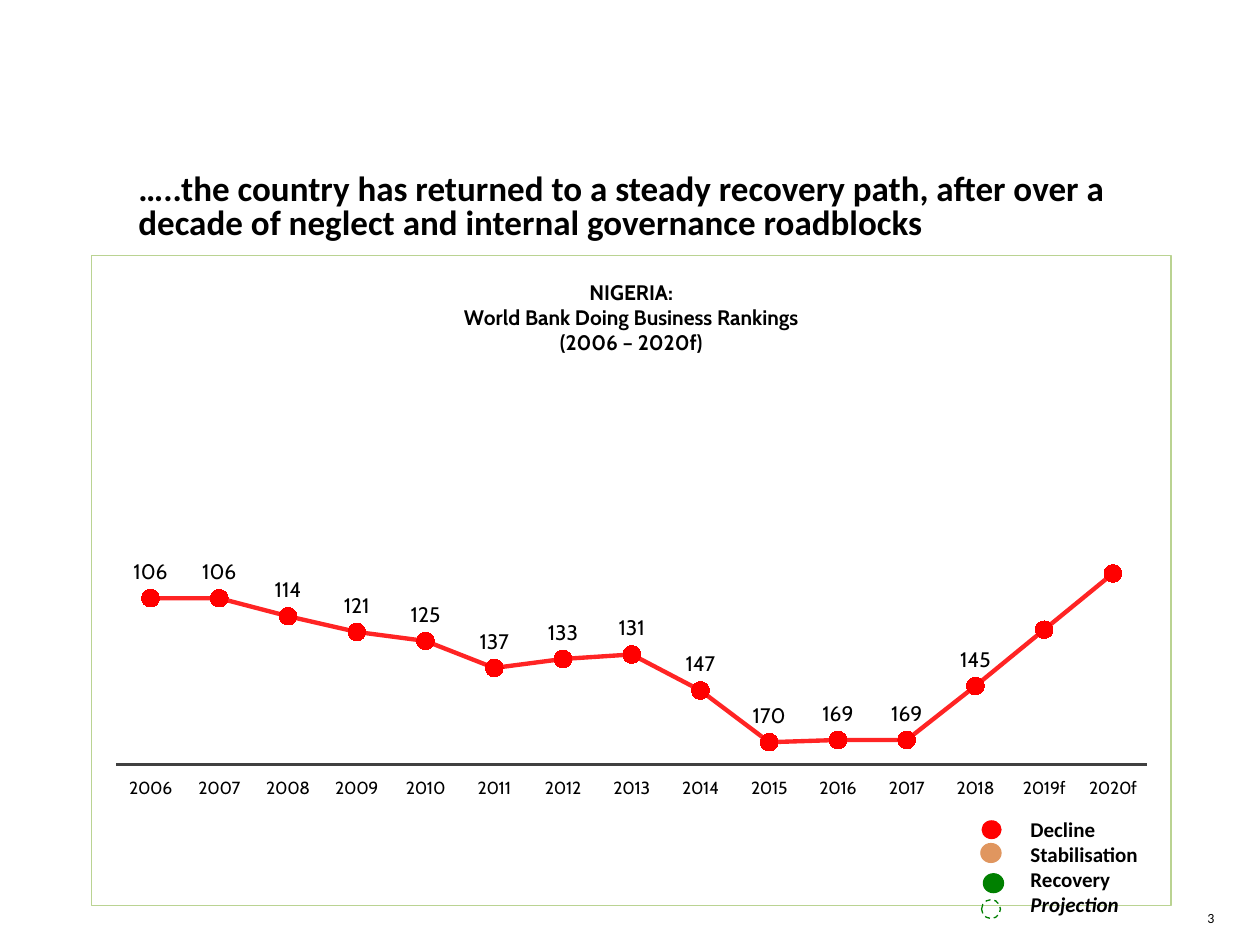
from lxml.etree import SubElement
from pptx import Presentation
from pptx.chart.data import CategoryChartData
from pptx.dml.color import RGBColor
from pptx.enum.chart import (XL_AXIS_CROSSES, XL_CHART_TYPE, XL_LABEL_POSITION,
                             XL_MARKER_STYLE, XL_TICK_LABEL_POSITION, XL_TICK_MARK)
from pptx.enum.dml import MSO_LINE
from pptx.enum.shapes import MSO_SHAPE
from pptx.enum.text import MSO_ANCHOR, PP_ALIGN
from pptx.oxml import parse_xml
from pptx.oxml.ns import nsdecls, qn
from pptx.util import Inches, Pt

COLOURS = {"text": "000000", "axis": "404040", "border": "BAD392",
           "decline": "FF0000", "stabilisation": "E0965F", "recovery": "008000"}
COLUMNS, ROWS = 100, 75
RANKINGS = {"2006": 106, "2007": 106, "2008": 114, "2009": 121, "2010": 125,
            "2011": 137, "2012": 133, "2013": 131, "2014": 147, "2015": 170,
            "2016": 169, "2017": 169, "2018": 145, "2019f": 120, "2020f": 95}
PHASES = ["decline"] * 10 + ["stabilisation"] * 2 + ["recovery"] * 3
TITLE_LINES = ["NIGERIA:", "World Bank Doing Business Rankings", "(2006 – 2020f)"]
PLOT = {"x": 0.023, "y": 0.161, "w": 0.955, "h": 0.623}


class RankingSlide:
    """Holds the style and the current slide, and draws each kind of element."""

    def __init__(self, presentation):
        self.width = presentation.slide_width
        self.height = presentation.slide_height
        self.slide = presentation.slides.add_slide(presentation.slide_layouts[6])
        self.text_font, self.chart_font = "Calibri", "Cabin"

    def colour(self, name):
        return RGBColor.from_string(COLOURS[name])

    def place(self, left, top, width, height):
        column, row = self.width / COLUMNS, self.height / ROWS
        return int(left * column), int(top * row), int(width * column), int(height * row)

    def style(self, font, family, size, bold=False):
        font.name, font.size, font.bold = family, Pt(size), bold
        font.color.rgb = self.colour("text")

    def text(self, box, lines, size, bold=True, wrap=True, inset=True,
             align=PP_ALIGN.LEFT, anchor=MSO_ANCHOR.TOP, spacing=1.0, italic=()):
        frame = self.slide.shapes.add_textbox(*self.place(*box)).text_frame
        frame.word_wrap, frame.vertical_anchor = wrap, anchor
        if not inset:
            frame.margin_left = frame.margin_right = 0
            frame.margin_top = frame.margin_bottom = 0
        for index, line in enumerate(lines):
            paragraph = frame.add_paragraph() if index else frame.paragraphs[0]
            paragraph.alignment, paragraph.line_spacing = align, spacing
            run = paragraph.add_run()
            run.text = line
            self.style(run.font, self.text_font, size, bold)
            run.font.italic = line in italic

    def dot(self, box, colour, projected=False):
        shape = self.slide.shapes.add_shape(MSO_SHAPE.OVAL, *self.place(*box))
        shape.shadow.inherit = False
        if projected:
            shape.fill.background()
            shape.line.color.rgb = self.colour(colour)
            shape.line.width, shape.line.dash_style = Pt(0.75), MSO_LINE.DASH
        else:
            shape.fill.solid()
            shape.fill.fore_color.rgb = self.colour(colour)
            shape.line.fill.background()

    def chart(self, box):
        data = CategoryChartData()
        data.categories = list(RANKINGS)
        data.add_series("Series 1", list(RANKINGS.values()))
        chart = self.slide.shapes.add_chart(
            XL_CHART_TYPE.LINE_MARKERS, *self.place(*box), data).chart
        self.style(chart.font, self.chart_font, 10)
        chart.has_legend = False
        self.chart_title(chart)
        self.axes(chart)
        self.series(chart.plots[0])
        self.frame(chart)

    def chart_title(self, chart):
        frame = chart.chart_title.text_frame
        for index, line in enumerate(TITLE_LINES):
            paragraph = frame.add_paragraph() if index else frame.paragraphs[0]
            run = paragraph.add_run()
            run.text = line
            self.style(run.font, self.chart_font, 12, True)

    def axes(self, chart):
        values, years = chart.value_axis, chart.category_axis
        values.minimum_scale, values.maximum_scale = 0, 180
        values.reverse_order, values.visible = True, False
        values.has_major_gridlines = False
        values.crosses = XL_AXIS_CROSSES.MAXIMUM
        years.major_tick_mark = years.minor_tick_mark = XL_TICK_MARK.NONE
        years.tick_label_position = XL_TICK_LABEL_POSITION.HIGH
        years.format.line.color.rgb = self.colour("axis")
        years.format.line.width = Pt(1.5)

    def series(self, plot):
        plot.vary_by_categories = False
        series = plot.series[0]
        series.smooth = False
        line = series.format.line
        line.color.rgb, line.width = self.colour("decline"), Pt(2.5)
        solid = series.format.line._ln.find(qn("a:solidFill"))
        SubElement(solid[0], qn("a:alpha"), val="85000")
        self.marker(series.marker, "decline")
        for index, phase in enumerate(PHASES):
            if phase != "decline":
                point = series.points[index]
                self.marker(point.marker, phase)
                point.format.line.color.rgb = self.colour("decline")
                point.format.line.width = Pt(2.5)
                solid = point.format.line._ln.find(qn("a:solidFill"))
                SubElement(solid[0], qn("a:alpha"), val="85000")
        labels = series.data_labels
        labels.show_value, labels.position = True, XL_LABEL_POSITION.ABOVE
        self.style(labels.font, self.chart_font, 12)
        forecasts = [index for index, year in enumerate(RANKINGS) if year.endswith("f")]
        for order, index in enumerate(forecasts):
            labels._element.insert(order, parse_xml(
                f'<c:dLbl {nsdecls("c")}><c:idx val="{index}"/><c:delete val="1"/></c:dLbl>'))

    def marker(self, marker, colour):
        marker.style, marker.size = XL_MARKER_STYLE.CIRCLE, 10
        marker.format.fill.solid()
        marker.format.fill.fore_color.rgb = self.colour(colour)
        marker.format.line.color.rgb = self.colour(colour)

    def frame(self, chart):
        area = chart._chartSpace.chart.plotArea
        for old in area.findall(qn("c:layout")):
            area.remove(old)
        sizes = "".join(f'<c:{key} val="{share}"/>' for key, share in PLOT.items())
        area.insert(0, parse_xml(
            f'<c:layout {nsdecls("c")}><c:manualLayout><c:layoutTarget val="inner"/>'
            f'<c:xMode val="edge"/><c:yMode val="edge"/>{sizes}</c:manualLayout></c:layout>'))
        chart._chartSpace.chart.addnext(parse_xml(
            f'<c:spPr {nsdecls("c", "a")}><a:noFill/><a:ln w="{Pt(0.75)}"><a:solidFill>'
            f'<a:srgbClr val="{COLOURS["border"]}"/></a:solidFill></a:ln></c:spPr>'))


def main():
    presentation = Presentation()
    presentation.slide_width, presentation.slide_height = Inches(10), Inches(7.5)
    page = RankingSlide(presentation)
    page.text((95, 72.2, 1.4, 1.3), ["3"], 8, bold=False, wrap=False, inset=False,
              align=PP_ALIGN.RIGHT, anchor=MSO_ANCHOR.MIDDLE)
    page.chart((7.2, 20.2, 85.8, 51.7))
    page.text((10, 13.2, 81.4, 6.7),
              ["…..the country has returned to a steady recovery path, after over a "
               "decade of neglect and internal governance roadblocks"],
              20, anchor=MSO_ANCHOR.MIDDLE, spacing=0.8)
    page.text((80.8, 64.3, 10.8, 9.1),
              ["Decline", "Stabilisation", "Recovery", "Projection"],
              12, wrap=False, italic=("Projection",))
    page.dot((77.9, 65.1, 1.6, 1.5), "decline")
    page.dot((77.8, 66.9, 1.7, 1.6), "stabilisation")
    page.dot((78, 69.3, 1.7, 1.6), "recovery")
    page.dot((77.9, 71.4, 1.5, 1.5), "recovery", projected=True)
    presentation.save("out.pptx")


if __name__ == "__main__":
    main()
